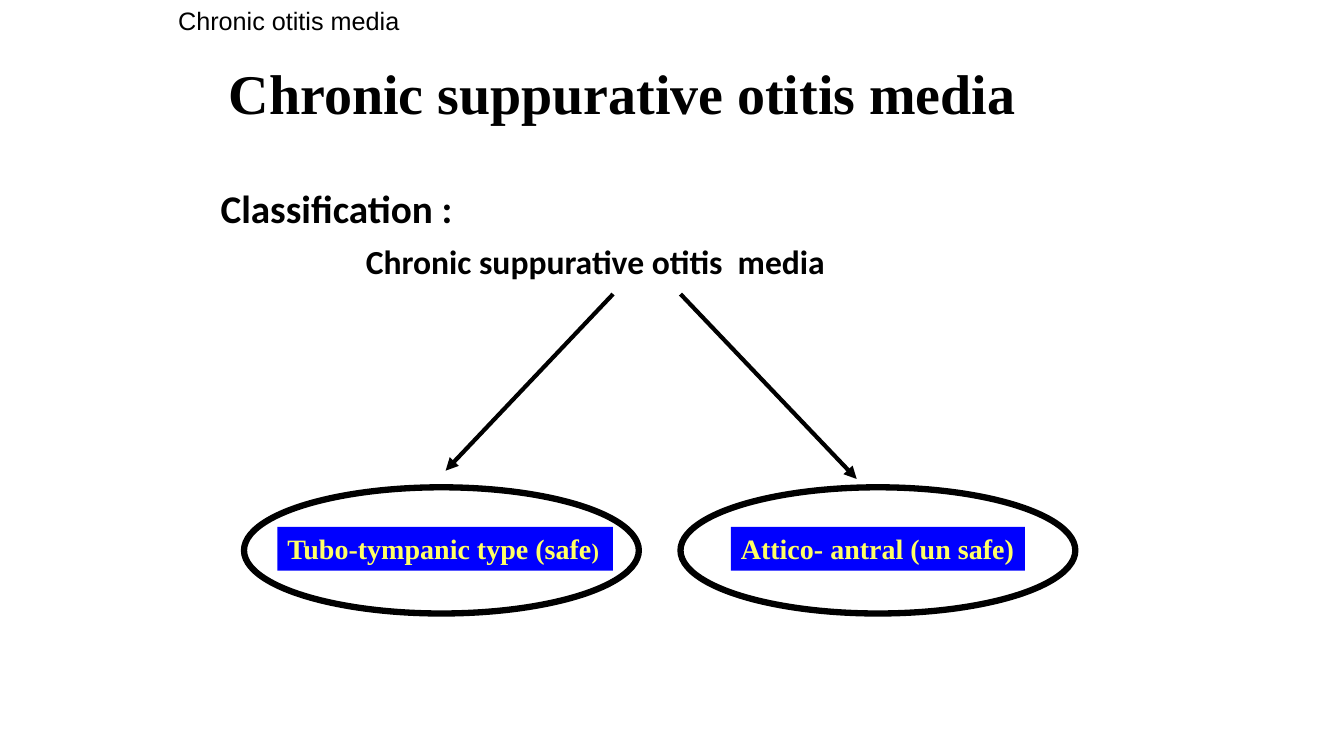
from dataclasses import dataclass

from lxml.etree import SubElement
from pptx import Presentation
from pptx.dml.color import RGBColor
from pptx.enum.shapes import MSO_CONNECTOR, MSO_SHAPE
from pptx.enum.text import MSO_ANCHOR, MSO_AUTO_SIZE, PP_ALIGN
from pptx.oxml.ns import qn
from pptx.slide import Slide
from pptx.text.text import TextFrame, _Paragraph as Paragraph
from pptx.util import Cm, Pt

BLACK, BLUE, YELLOW = "000000", "0000FF", "FFFF66"
SERIF = "Times New Roman"
ELLIPSE_TOP, ELLIPSE_WIDTH, ELLIPSE_HEIGHT = 12.28, 9.95, 3.18
LABEL_TOP, LABEL_HEIGHT = 13.28, 1.1
ARROW_TOP = 7.41


@dataclass(frozen=True)
class Run:
    text: str
    size: float
    font: str = SERIF
    color: str = BLACK
    bold: bool = True


@dataclass(frozen=True)
class DiseaseType:
    runs: tuple[Run, ...]
    ellipse_left: float
    label_left: float
    label_width: float
    arrow_start: float
    arrow_end: tuple[float, float]


DISEASE_TYPES = (
    DiseaseType((Run("Tubo-tympanic type (safe", 20, color=YELLOW), Run(")", 16, color=YELLOW)),
                6.15, 6.99, 8.46, 15.45, (11.23, 11.86)),
    DiseaseType((Run("Attico- antral (un safe)", 20, color=YELLOW),),
                17.15, 18.42, 7.41, 17.15, (21.59, 12.07)),
)


def rgb(color: str) -> RGBColor:
    return RGBColor.from_string(color)


def write(paragraph: Paragraph, *runs: Run) -> None:
    paragraph.alignment = PP_ALIGN.LEFT
    for item in runs:
        run = paragraph.add_run()
        run.text = item.text
        run.font.name = item.font
        run.font.size = Pt(item.size)
        run.font.bold = item.bold
        run.font.color.rgb = rgb(item.color)


def indent(paragraph: Paragraph, left: float) -> None:
    properties = paragraph._p.get_or_add_pPr()
    properties.set("marL", str(Cm(left)))
    properties.set("indent", "0")


def add_title(slide: Slide) -> None:
    title = slide.shapes.title
    title.left, title.top, title.width, title.height = Cm(5.51), Cm(0.84), Cm(22.86), Cm(3.18)
    frame = title.text_frame
    frame.auto_size = MSO_AUTO_SIZE.NONE
    frame.vertical_anchor = MSO_ANCHOR.MIDDLE
    frame.paragraphs[0].line_spacing = 0.9
    write(frame.paragraphs[0], Run("Chronic suppurative otitis media", 40))


def add_text_box(slide: Slide, left: float, top: float, width: float, height: float) -> TextFrame:
    frame = slide.shapes.add_textbox(Cm(left), Cm(top), Cm(width), Cm(height)).text_frame
    frame.word_wrap = True
    return frame


def add_classification(slide: Slide) -> None:
    frame = add_text_box(slide, 5.08, 4.65, 23.5, 12.27)
    heading, disease = frame.paragraphs[0], frame.add_paragraph()
    indent(heading, 0.23)
    indent(disease, 3.89)
    heading.line_spacing = disease.line_spacing = 0.9
    disease.space_before = Pt(10)
    write(heading, Run("Classification :", 28, "Calibri"))
    write(disease, Run("Chronic suppurative otitis  media", 24, "Calibri"))


def add_arrow(slide: Slide, start: float, end: tuple[float, float]) -> None:
    arrow = slide.shapes.add_connector(
        MSO_CONNECTOR.STRAIGHT, Cm(start), Cm(ARROW_TOP), Cm(end[0]), Cm(end[1]))
    arrow.line.color.rgb = rgb(BLACK)
    arrow.line.width = Pt(3)
    SubElement(arrow.line._get_or_add_ln(), qn("a:tailEnd"), type="triangle")
    SubElement(arrow._element.spPr, qn("a:effectLst"))


def add_label(slide: Slide, disease_type: DiseaseType) -> None:
    label = slide.shapes.add_shape(
        MSO_SHAPE.RECTANGLE, Cm(disease_type.label_left), Cm(LABEL_TOP),
        Cm(disease_type.label_width), Cm(LABEL_HEIGHT))
    label.shadow.inherit = False
    label.fill.solid()
    label.fill.fore_color.rgb = rgb(BLUE)
    label.line.fill.background()
    label.text_frame.word_wrap = True
    label.text_frame.vertical_anchor = MSO_ANCHOR.TOP
    write(label.text_frame.paragraphs[0], *disease_type.runs)


def add_ellipse(slide: Slide, left: float) -> None:
    ellipse = slide.shapes.add_shape(
        MSO_SHAPE.OVAL, Cm(left), Cm(ELLIPSE_TOP), Cm(ELLIPSE_WIDTH), Cm(ELLIPSE_HEIGHT))
    ellipse.shadow.inherit = False
    ellipse.fill.background()
    ellipse.line.color.rgb = rgb(BLACK)
    ellipse.line.width = Pt(4.5)


def main() -> None:
    presentation = Presentation()
    presentation.slide_width, presentation.slide_height = Cm(33.87), Cm(19.05)
    slide = presentation.slides.add_slide(presentation.slide_layouts[5])
    add_title(slide)
    add_classification(slide)
    for disease_type in DISEASE_TYPES:
        add_arrow(slide, disease_type.arrow_start, disease_type.arrow_end)
        add_label(slide, disease_type)
        add_ellipse(slide, disease_type.ellipse_left)
    topic = add_text_box(slide, 4.24, 0, 6.32, 1.02)
    topic.word_wrap = False
    write(topic.paragraphs[0], Run("Chronic otitis media", 18, "Arial", bold=False))
    presentation.save("out.pptx")


if __name__ == "__main__":
    main()
